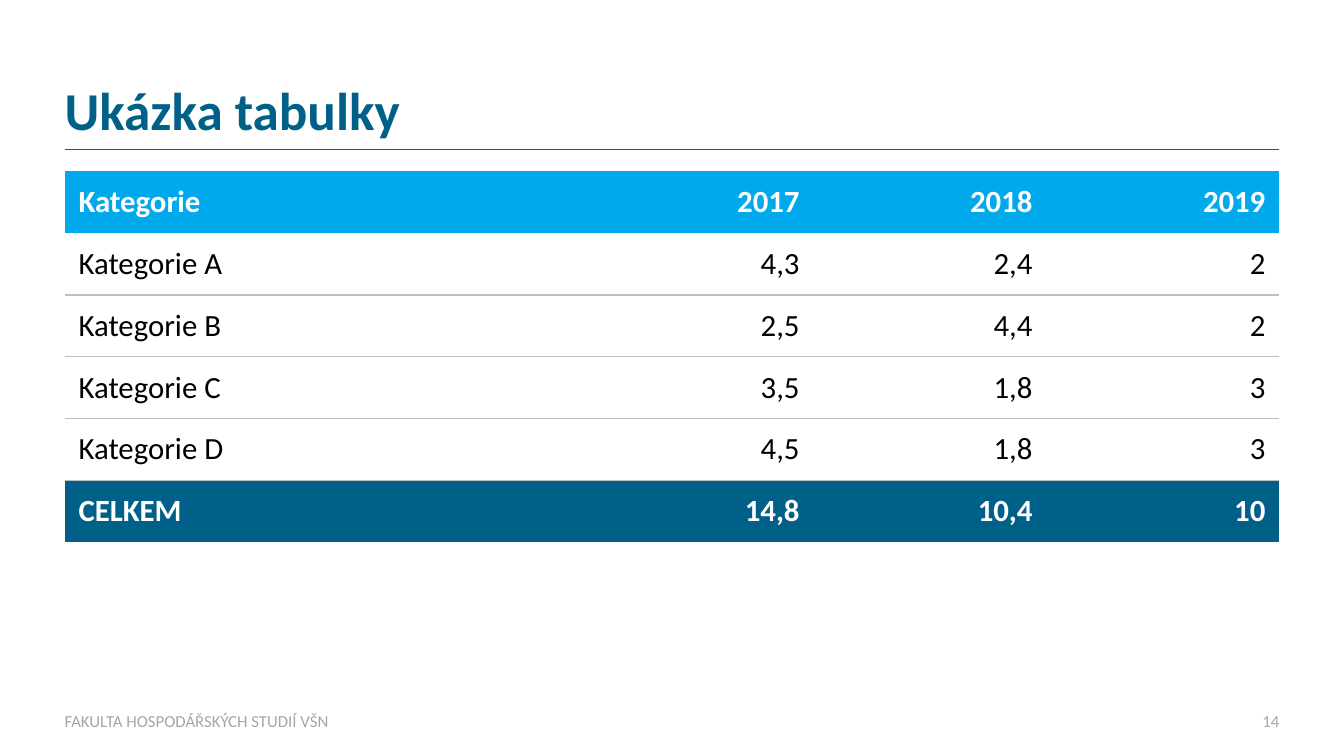
from lxml.etree import SubElement
from pptx import Presentation
from pptx.dml.color import RGBColor
from pptx.enum.shapes import MSO_CONNECTOR
from pptx.enum.text import MSO_ANCHOR, PP_ALIGN
from pptx.oxml.ns import qn
from pptx.util import Pt

SCALE = 9144
NAVY, SKY, WHITE, BLACK = "006088", "00A8EC", "FFFFFF", "000000"
RULE, MUTED = "BFBFBF", "A6A6A6"
PLAIN = "{2D5ABB26-0587-4C30-8999-92F81FD0307C}"
TITLE = {"size": Pt(38), "bold": True}
HEAD = {"size": Pt(22), "bold": True}
BODY = {"size": Pt(22), "bold": False}
SMALL = {"size": Pt(12), "bold": False}
COLS = [512, 231, 231, 231]
ROWS = [
    ["Kategorie", "2017", "2018", "2019"],
    ["Kategorie A", "4,3", "2,4", "2"],
    ["Kategorie B", "2,5", "4,4", "2"],
    ["Kategorie C", "3,5", "1,8", "3"],
    ["Kategorie D", "4,5", "1,8", "3"],
    ["CELKEM", "14,8", "10,4", "10"],
]


def px(*vals):
    """Turn px lengths into EMU."""
    return [val * SCALE for val in vals]


def paint(code):
    """Turn a hex string into a colour."""
    return RGBColor.from_string(code)


def put(goal, vals):
    """Set each named value on an object."""
    for name, val in vals.items():
        setattr(goal, name, val)


def write(frame, text, style, tint, align=PP_ALIGN.LEFT):
    """Write one styled line into a text frame."""
    para = frame.paragraphs[0]
    para.alignment = align
    run = para.add_run()
    run.text = text
    put(run.font, {"name": "Calibri", **style})
    run.font.color.rgb = paint(tint)
    return para


def label(slide, box, text, style, tint, anchor, align=PP_ALIGN.LEFT):
    """Place a text box with no margins."""
    frame = slide.shapes.add_textbox(*px(*box)).text_frame
    put(frame, {"word_wrap": True, "vertical_anchor": anchor,
                "margin_left": 0, "margin_right": 0,
                "margin_top": 0, "margin_bottom": 0})
    return write(frame, text, style, tint, align)


def header(slide, x, y, w, h):
    """Draw the title and the rule at the foot of its box."""
    line = slide.shapes.add_connector(
        MSO_CONNECTOR.STRAIGHT, *px(x, y + h, x + w, y + h))
    line.line.width = Pt(0.25)
    line.line.color.rgb = paint(NAVY)
    SubElement(line._element.spPr, qn("a:effectLst"))
    para = label(slide, (x, y, w, h - 7), "Ukázka tabulky", TITLE, NAVY,
                 MSO_ANCHOR.BOTTOM)
    para.line_spacing = 0.9


def border(cell, side):
    """Draw a thin grey border on one side of a cell."""
    edge = SubElement(cell._tc.get_or_add_tcPr(), qn(f"a:ln{side}"),
                      w=str(Pt(1)))
    fill = SubElement(edge, qn("a:solidFill"))
    SubElement(fill, qn("a:srgbClr"), val=RULE)


def grid(slide, x, y, w, h):
    """Draw the table with its head, body and total rows."""
    last = len(ROWS) - 1
    table = slide.shapes.add_table(
        len(ROWS), len(COLS), *px(x, y, w, h)).table
    put(table, {"first_row": False, "horz_banding": False})
    table._tbl.tblPr.find(qn("a:tableStyleId")).text = PLAIN
    for col, wide in zip(table.columns, COLS):
        col.width = px(wide)[0]
    side, edge = px(14, 7)
    for r, row in enumerate(ROWS):
        back = {0: SKY, last: NAVY}.get(r)
        for c, text in enumerate(row):
            cell = table.cell(r, c)
            put(cell, {"vertical_anchor": MSO_ANCHOR.MIDDLE,
                       "margin_left": side, "margin_right": side,
                       "margin_top": edge, "margin_bottom": edge})
            if 1 < r < last:
                border(cell, "T")
            if 0 < r < last - 1:
                border(cell, "B")
            if back:
                cell.fill.solid()
                cell.fill.fore_color.rgb = paint(back)
            else:
                cell.fill.background()
            write(cell.text_frame, text, HEAD if back else BODY,
                  WHITE if back else BLACK,
                  PP_ALIGN.RIGHT if c else PP_ALIGN.LEFT)


def footer(slide, x, y, w, h):
    """Place the faculty name and the page number."""
    label(slide, (x, y, 1016, h), "FAKULTA HOSPODÁŘSKÝCH STUDIÍ VŠN",
          SMALL, MUTED, MSO_ANCHOR.MIDDLE)
    label(slide, (x + w - 51, y, 51, h), "14", SMALL, MUTED,
          MSO_ANCHOR.MIDDLE, PP_ALIGN.RIGHT)


def main():
    """Build the slide and save it."""
    deck = Presentation()
    wide, high = px(1333, 750)
    put(deck, {"slide_width": wide, "slide_height": high})
    slide = deck.slides.add_slide(deck.slide_layouts[6])
    header(slide, 64, 83, 1205, 65)
    grid(slide, 64, 170, 1205, 368)
    footer(slide, 64, 705, 1205, 20)
    deck.save("out.pptx")


if __name__ == "__main__":
    main()
